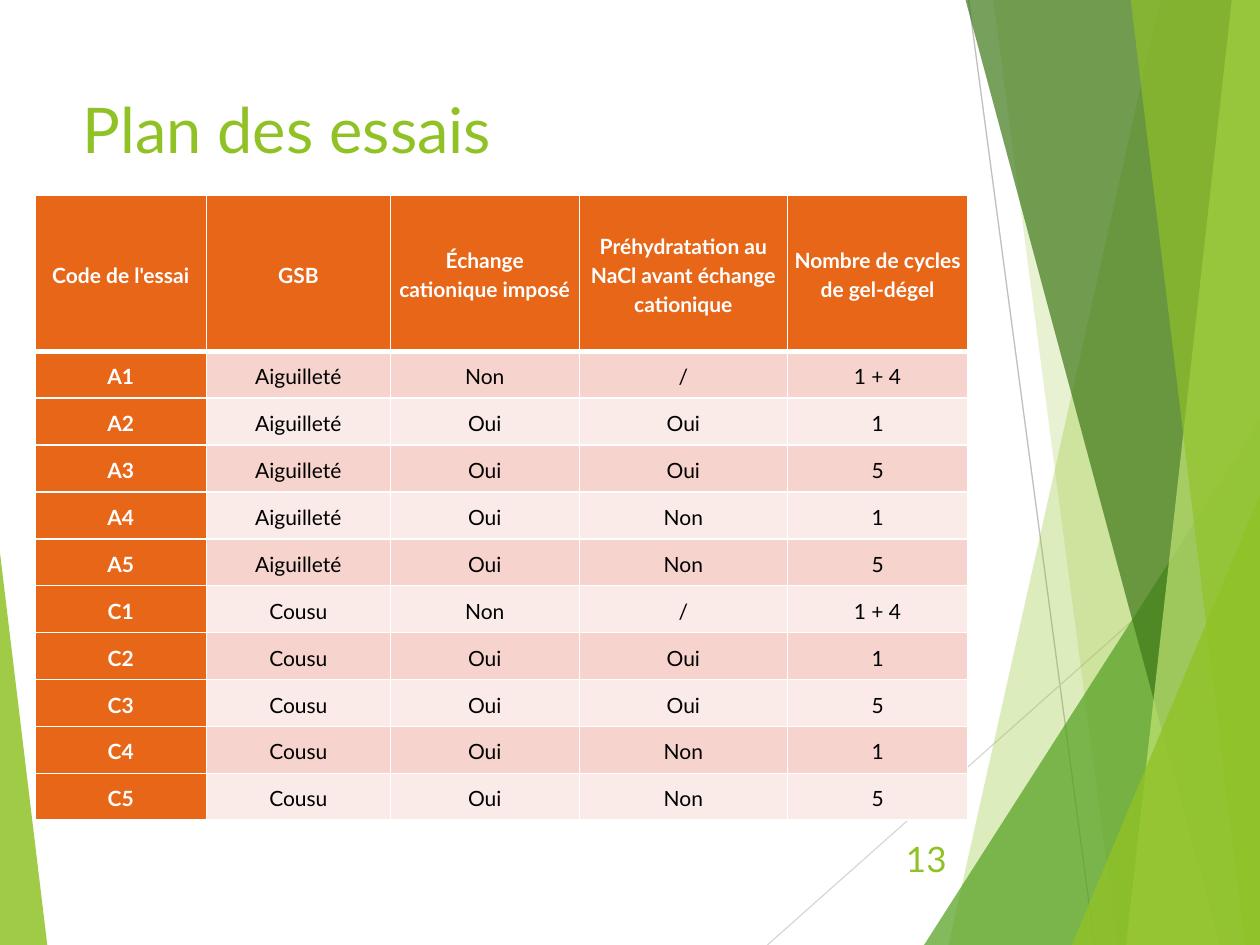
"""Build the test plan slide: a banded table beside green facets."""
from typing import NamedTuple

from lxml import etree
from pptx import Presentation
from pptx.dml.color import RGBColor
from pptx.enum.shapes import MSO_CONNECTOR, MSO_SHAPE
from pptx.enum.text import MSO_ANCHOR, PP_ALIGN
from pptx.oxml.ns import qn
from pptx.util import Pt

STRAIGHT = MSO_CONNECTOR.STRAIGHT
TRIANGLE = MSO_SHAPE.ISOSCELES_TRIANGLE
TOP, MIDDLE = MSO_ANCHOR.TOP, MSO_ANCHOR.MIDDLE
LEFT, CENTER, RIGHT = PP_ALIGN.LEFT, PP_ALIGN.CENTER, PP_ALIGN.RIGHT
WIDTH, HEIGHT = 720, 540
FONT = "Lato"
GREEN, ORANGE, WHITE, BLACK = "90C226", "E76618", "FFFFFF", "000000"
BANDS = "F6D3CC", "FAEAE8"


class Line(NamedTuple):
    x1: float
    y1: float
    x2: float
    y2: float
    color: str


class Facet(NamedTuple):
    top: float
    base: float
    color: str
    alpha: int


class Wedge(NamedTuple):
    x: float
    y: float
    width: float
    apex: float
    color: str
    alpha: int


DECOR = (
    Line(553.5, 0, 625.5, HEIGHT, "BFBFBF"),
    Line(WIDTH, 290, 438.5, HEIGHT, "D9D9D9"),
    Facet(663, 542, GREEN, 30),
    Facet(567.5, 638.5, GREEN, 20),
    Wedge(528, 240, 192, 1, "54A021", 72),
    Facet(551.5, 697, "3F7819", 70),
    Facet(704, 643.5, "C0E474", 70),
    Facet(646, 711.5, GREEN, 65),
    Wedge(612.5, 283, 107.5, 1, GREEN, 80),
    Wedge(0, 316, 27, 0, GREEN, 85),
)
HEADS = (
    "Code de l'essai",
    "GSB",
    "Échange cationique imposé",
    "Préhydratation au NaCl avant échange cationique",
    "Nombre de cycles de gel-dégel",
)
TESTS = (
    ("Non", "/", "1 + 4"),
    ("Oui", "Oui", "1"),
    ("Oui", "Oui", "5"),
    ("Oui", "Non", "1"),
    ("Oui", "Non", "5"),
)
GROUPS = ("A", "Aiguilleté"), ("C", "Cousu")
COLS = 98, 105, 108, 119, 103
HEAD_ROW, BODY_ROW = 89.3, 26.8


def rgb(color: str) -> RGBColor:
    """Turn a hex string into a colour."""
    return RGBColor.from_string(color)


def write(frame, text: str, *, size: float, color: str, bold=False,
          align=LEFT, anchor=MIDDLE, space=1.0) -> None:
    """Put formatted text into a text frame."""
    frame.word_wrap = True
    frame.vertical_anchor = anchor
    para = frame.paragraphs[0]
    para.alignment, para.line_spacing = align, space
    run = para.add_run()
    run.text = text
    font = run.font
    font.name, font.size, font.bold = FONT, Pt(size), bold
    font.color.rgb = rgb(color)


def paint(shape, color: str, alpha: int) -> None:
    """Give a shape a see-through fill with no line or shadow."""
    shape.shadow.inherit = False
    shape.line.fill.background()
    shape.fill.solid()
    shape.fill.fore_color.rgb = rgb(color)
    tint = shape.fill._xPr.find(".//" + qn("a:srgbClr"))
    etree.SubElement(tint, qn("a:alpha"), val=str(alpha * 1000))


def draw_line(shapes, line: Line) -> None:
    """Draw a thin straight line."""
    ends = (Pt(v) for v in line[:4])
    link = shapes.add_connector(STRAIGHT, *ends)
    link.line.width = Pt(0.75)
    link.line.color.rgb = rgb(line.color)
    etree.SubElement(link._element.spPr, qn("a:effectLst"))


def draw_facet(shapes, facet: Facet) -> None:
    """Draw a full-height facet that runs to the right edge."""
    pen = shapes.build_freeform(Pt(facet.top), Pt(-1))
    pen.add_line_segments([
        (Pt(WIDTH), Pt(-1)),
        (Pt(WIDTH), Pt(HEIGHT)),
        (Pt(facet.base), Pt(HEIGHT)),
    ])
    paint(pen.convert_to_shape(), facet.color, facet.alpha)


def draw_wedge(shapes, wedge: Wedge) -> None:
    """Draw a triangle that stands on the bottom edge."""
    shape = shapes.add_shape(TRIANGLE, Pt(wedge.x), Pt(wedge.y),
                             Pt(wedge.width), Pt(HEIGHT - wedge.y))
    shape.adjustments[0] = wedge.apex
    paint(shape, wedge.color, wedge.alpha)


def edge(cell, widths: dict[str, float]) -> None:
    """Add white borders of the given widths to a cell."""
    props = cell._tc.get_or_add_tcPr()
    for spot, (side, width) in enumerate(widths.items()):
        line = etree.Element(qn("a:ln" + side), w=str(Pt(width)))
        fill = etree.SubElement(line, qn("a:solidFill"))
        etree.SubElement(fill, qn("a:srgbClr"), val=WHITE)
        props.insert(spot, line)


def draw_table(shapes) -> None:
    """Draw the test plan table."""
    rows = [HEADS] + [
        (f"{code}{num}", kind, *test)
        for code, kind in GROUPS
        for num, test in enumerate(TESTS, 1)
    ]
    high = HEAD_ROW + BODY_ROW * (len(rows) - 1)
    table = shapes.add_table(len(rows), len(COLS), Pt(20), Pt(111.5),
                             Pt(sum(COLS)), Pt(high)).table
    for col, width in zip(table.columns, COLS):
        col.width = Pt(width)
    for r, row in enumerate(rows):
        table.rows[r].height = Pt(BODY_ROW if r else HEAD_ROW)
        for c, text in enumerate(row):
            cell = table.cell(r, c)
            head = r == 0 or c == 0
            cell.margin_left = cell.margin_right = Pt(3.6)
            cell.margin_top = cell.margin_bottom = Pt(0)
            cell.vertical_anchor = MIDDLE
            cell.fill.solid()
            cell.fill.fore_color.rgb = rgb(ORANGE if head else BANDS[(r - 1) % 2])
            write(cell.text_frame, text, size=12, bold=head, align=CENTER,
                  color=WHITE if head else BLACK, space=1.15)
            edge(cell, {"L": 1, "R": 1, "T": 3 if r == 1 else 1,
                        "B": 1 if r else 3})


def main() -> None:
    """Build and save the slide."""
    deck = Presentation()
    deck.slide_width, deck.slide_height = Pt(WIDTH), Pt(HEIGHT)
    slide = deck.slides.add_slide(deck.slide_layouts[5])
    shapes = slide.shapes
    tools = {Line: draw_line, Facet: draw_facet, Wedge: draw_wedge}
    for item in DECOR:
        tools[type(item)](shapes, item)
    title = shapes.title
    title.left, title.top = Pt(40), Pt(48)
    title.width, title.height = Pt(508), Pt(104)
    write(title.text_frame, "Plan des essais", size=36, color=GREEN, anchor=TOP)
    draw_table(shapes)
    page = shapes.add_textbox(Pt(507.5), Pt(476), Pt(40.5), Pt(29))
    write(page.text_frame, "13", size=20, color=GREEN, align=RIGHT)
    deck.save("out.pptx")


if __name__ == "__main__":
    main()
